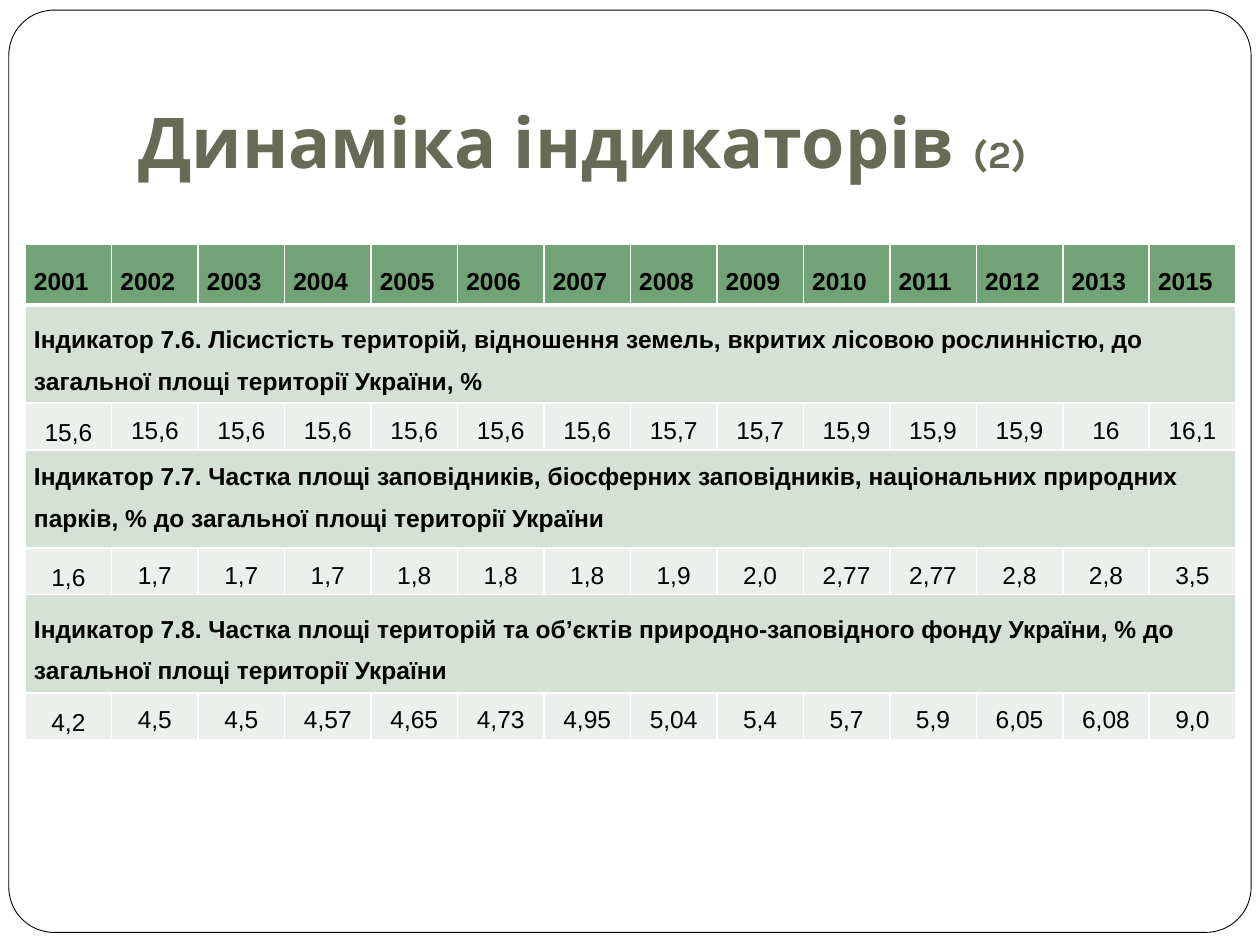
from lxml import etree
from pptx import Presentation
from pptx.dml.color import RGBColor
from pptx.enum.shapes import MSO_SHAPE
from pptx.enum.text import MSO_ANCHOR, PP_ALIGN
from pptx.oxml.ns import qn
from pptx.util import Inches, Pt

ROUND_RECT = MSO_SHAPE.ROUNDED_RECTANGLE
TOP, MIDDLE, BOTTOM = MSO_ANCHOR.TOP, MSO_ANCHOR.MIDDLE, MSO_ANCHOR.BOTTOM
LEFT, CENTER = PP_ALIGN.LEFT, PP_ALIGN.CENTER

WHITE, BLACK, OLIVE = "FFFFFF", "000000", "676A55"
HEADER_FILL, HEADING_FILL, VALUE_FILL = "72A376", "D5E0D6", "EBF0EC"
HEADER_H, HEADING_H, VALUE_H = 0.48, 0.78, 0.37

YEARS = [*range(2001, 2014), 2015]
# Heading, its vertical anchor, yearly values
INDICATORS = [
    ("Індикатор 7.6. Лісистість територій, відношення земель, вкритих лісовою "
     "рослинністю, до загальної площі території України, %", MIDDLE,
     "15,6 15,6 15,6 15,6 15,6 15,6 15,6 15,7 15,7 15,9 15,9 15,9 16 16,1"),
    ("Індикатор 7.7. Частка площі заповідників, біосферних заповідників, "
     "національних природних парків, % до загальної площі території України", TOP,
     "1,6 1,7 1,7 1,7 1,8 1,8 1,8 1,9 2,0 2,77 2,77 2,8 2,8 3,5"),
    ("Індикатор 7.8. Частка площі територій та об’єктів природно-заповідного "
     "фонду України, % до загальної площі території України", MIDDLE,
     "4,2 4,5 4,5 4,57 4,65 4,73 4,95 5,04 5,4 5,7 5,9 6,05 6,08 9,0"),
]


def rgb(color):
    return RGBColor.from_string(color)


def add_run(p, text, size=14, font="Arial", color=BLACK, bold=False):
    r = p.add_run()
    r.text = text
    r.font.size = Pt(size)
    r.font.name = font
    r.font.bold = bold
    r.font.color.rgb = rgb(color)


def set_borders(cell, **widths):
    """Draw white cell borders; widths in points by side: L, R, T, B."""
    tcPr = cell._tc.get_or_add_tcPr()
    for i, (side, width) in enumerate(widths.items()):
        ln = etree.Element(qn(f"a:ln{side}"), w=str(Pt(width)))
        fill = etree.SubElement(ln, qn("a:solidFill"))
        etree.SubElement(fill, qn("a:srgbClr"), val=WHITE)
        tcPr.insert(i, ln)


def fill_cell(cell, text, fill, align=LEFT, anchor=MIDDLE, bold=False, top=1, bottom=1):
    cell.fill.solid()
    cell.fill.fore_color.rgb = rgb(fill)
    cell.margin_left = cell.margin_right = Inches(0.07)
    cell.margin_top = cell.margin_bottom = 0
    cell.vertical_anchor = anchor
    p = cell.text_frame.paragraphs[0]
    p.alignment = align
    p.line_spacing = 1.5
    add_run(p, text, bold=bold)
    set_borders(cell, L=1, R=1, T=top, B=bottom)


def add_frame(s, x, y, w, h):
    sp = s.shapes.add_shape(ROUND_RECT, Inches(x), Inches(y), Inches(w), Inches(h))
    sp.adjustments[0] = 0.049
    sp.shadow.inherit = False
    sp.fill.solid()
    sp.fill.fore_color.rgb = rgb(WHITE)
    sp.line.color.rgb = rgb(BLACK)
    sp.line.width = Pt(0.5)


def add_title(s, x, y, w, h):
    tf = s.shapes.add_textbox(Inches(x), Inches(y), Inches(w), Inches(h)).text_frame
    tf.word_wrap = True
    tf.vertical_anchor = BOTTOM
    tf.margin_bottom = Inches(0.1)
    p = tf.paragraphs[0]
    for text, size in (("Динаміка індикаторів ", 40), ("(2)", 22)):
        add_run(p, text, size=size, font="Karla", color=OLIVE, bold=True)


def add_indicator_table(s, x, y, w):
    heights = [HEADER_H] + [HEADING_H, VALUE_H] * len(INDICATORS)
    table = s.shapes.add_table(len(heights), len(YEARS), Inches(x), Inches(y),
                               Inches(w), Inches(sum(heights))).table
    for row, height in zip(table.rows, heights):
        row.height = Inches(height)
    for col in table.columns:
        col.width = Inches(w / len(YEARS))

    # Year header
    for c, year in enumerate(YEARS):
        fill_cell(table.cell(0, c), str(year), HEADER_FILL, bold=True, bottom=3)

    # A merged heading row and a value row for each indicator
    for i, (heading, anchor, values) in enumerate(INDICATORS):
        r = 1 + 2 * i
        table.cell(r, 0).merge(table.cell(r, len(YEARS) - 1))
        fill_cell(table.cell(r, 0), heading, HEADING_FILL, anchor=anchor, bold=True,
                  top=3 if i == 0 else 1)
        for c, value in enumerate(values.split()):
            fill_cell(table.cell(r + 1, c), value, VALUE_FILL, align=CENTER,
                      anchor=MIDDLE if c == 0 else TOP)


def main():
    prs = Presentation()
    prs.slide_width, prs.slide_height = Inches(10), Inches(7.5)
    s = prs.slides.add_slide(prs.slide_layouts[6])
    add_frame(s, 0.07, 0.08, 9.86, 7.32)
    add_title(s, 1, 0.3, 8.5, 1.25)
    add_indicator_table(s, 0.2, 1.94, 9.61)
    prs.save("out.pptx")


if __name__ == "__main__":
    main()
